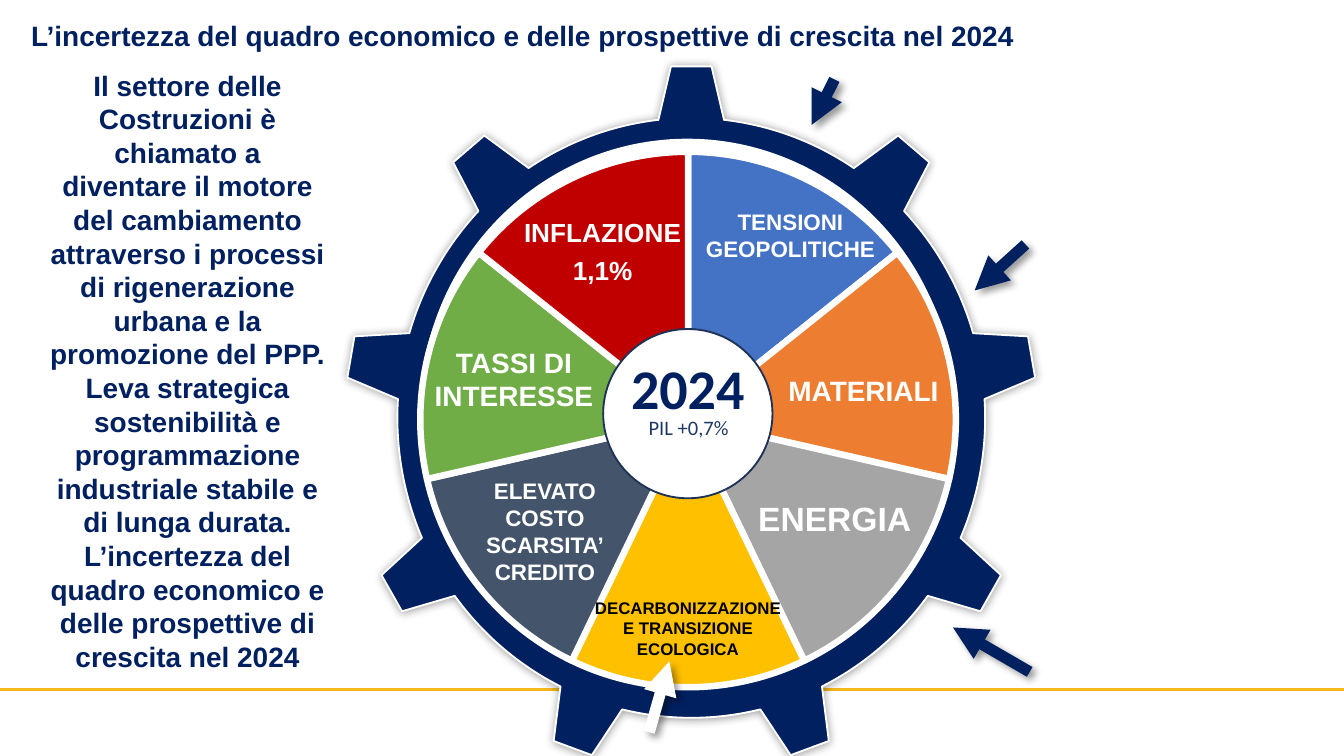
from dataclasses import dataclass

from lxml.etree import SubElement
from pptx import Presentation
from pptx.chart.data import CategoryChartData
from pptx.dml.color import RGBColor
from pptx.enum.chart import XL_CHART_TYPE
from pptx.enum.shapes import MSO_CONNECTOR, MSO_SHAPE
from pptx.enum.text import MSO_ANCHOR, MSO_AUTO_SIZE, PP_ALIGN
from pptx.oxml import parse_xml
from pptx.oxml.ns import nsdecls, qn
from pptx.util import Cm, Pt

NAVY = RGBColor(0x00, 0x20, 0x60)
DARK_BLUE = RGBColor(0x1E, 0x32, 0x56)
PIL_BLUE = RGBColor(0x20, 0x38, 0x64)
WHITE = RGBColor(0xFF, 0xFF, 0xFF)
BLACK = RGBColor(0x00, 0x00, 0x00)
GOLD = RGBColor(0xF7, 0xB8, 0x1D)
SLICE_COLORS = [RGBColor.from_string(h) for h in (
    "4472C4", "ED7D31", "A5A5A5", "FFC000", "44546A", "70AD47", "C00000")]

SPACED = {"line_spacing": 0.9, "space_after": Pt(5)}


@dataclass
class Label:
    box: tuple[float, float, float, float]
    lines: list[str]
    size: float
    color: RGBColor = WHITE
    font: str = "Arial"
    bold: bool = True
    align: PP_ALIGN = PP_ALIGN.CENTER
    spacing: dict | None = None


@dataclass
class Arrow:
    start: tuple[float, float]
    end: tuple[float, float]
    color: RGBColor = NAVY


TITLE = Label((0.41, 0.25, 24.6, 0.84),
              ["L’incertezza del quadro economico e delle prospettive di crescita nel 2024"],
              15, NAVY, align=PP_ALIGN.LEFT)
LABELS = [
    Label((9.47, 4.06, 3.84, 1.47), ["INFLAZIONE", "1,1%"], 14, spacing=SPACED),
    Label((7.9, 6.43, 3.63, 1.47), ["TASSI DI INTERESSE"], 15),
    Label((11.02, 11.2, 3.96, 1.35), ["DECARBONIZZAZIONE E TRANSIZIONE ECOLOGICA"], 9, BLACK),
    Label((8.66, 8.92, 3.28, 2.24), ["ELEVATO COSTO SCARSITA’", "CREDITO"], 12),
    Label((14.15, 9.32, 3.28, 0.97), ["ENERGIA"], 18, align=PP_ALIGN.LEFT),
    Label((14.68, 7.04, 3.28, 0.76), ["MATERIALI"], 15, spacing=SPACED),
    Label((12.83, 3.84, 4.22, 1.22), ["TENSIONI", "GEOPOLITICHE"], 12),
    Label((11.73, 7.75, 2.57, 0.66), ["PIL +0,7%"], 11, PIL_BLUE, "Calibri", False),
    Label((0.74, 1.19, 5.61, 11.79), [
        "Il settore delle Costruzioni è chiamato a diventare il motore del cambiamento "
        "attraverso i processi di rigenerazione urbana e la promozione del PPP.",
        "Leva strategica sostenibilità e programmazione industriale stabile e di lunga durata.",
        TITLE.lines[0]], 15, NAVY),
]
HUB = Label((11.4, 6.22, 3.2, 3.2), ["2024"], 30, NAVY, "Calibri")
ARROWS = [
    Arrow((19.38, 4.62), (18.42, 5.49)),
    Arrow((12.27, 13.84), (12.65, 12.5), WHITE),
    Arrow((15.77, 1.5), (15.34, 2.36)),
    Arrow((19.46, 12.7), (18.01, 11.86)),
]


def set_attrs(target, values: dict) -> None:
    for name, value in values.items():
        setattr(target, name, value)


def cm_box(box: tuple) -> list[Cm]:
    return [Cm(v) for v in box]


def add_shadow(sp, blur: float = 0, dist: float = 0, angle: int = 0, alpha: int = 0) -> None:
    """Give the shape a black outer shadow, or none when alpha is 0."""
    effects = SubElement(sp._element.spPr, qn("a:effectLst"))
    if alpha:
        effects.append(parse_xml(
            f'<a:outerShdw {nsdecls("a")} blurRad="{Pt(blur)}" dist="{Pt(dist)}" '
            f'dir="{angle * 60000}" algn="ctr" rotWithShape="0"><a:srgbClr val="000000">'
            f'<a:alpha val="{alpha * 1000}"/></a:srgbClr></a:outerShdw>'))


def write_text(tf, label: Label, insets: tuple) -> None:
    set_attrs(tf, dict(zip(("margin_left", "margin_top", "margin_right", "margin_bottom"),
                           cm_box(insets))))
    tf.word_wrap = True
    for i, line in enumerate(label.lines):
        p = tf.add_paragraph() if i else tf.paragraphs[0]
        set_attrs(p, {"alignment": label.align, **(label.spacing or {})})
        r = p.add_run()
        r.text = line
        set_attrs(r.font, {"name": label.font, "size": Pt(label.size), "bold": label.bold})
        r.font.color.rgb = label.color


def add_label(s, label: Label) -> None:
    sp = s.shapes.add_textbox(*cm_box(label.box))
    write_text(sp.text_frame, label, (0.18, 0.1, 0.18, 0.1))
    sp.text_frame.auto_size = MSO_AUTO_SIZE.SHAPE_TO_FIT_TEXT


def add_filled(s, kind: MSO_SHAPE, box: tuple, fill: RGBColor, line: RGBColor):
    sp = s.shapes.add_shape(kind, *cm_box(box))
    sp.shadow.inherit = False
    sp.fill.solid()
    sp.fill.fore_color.rgb = fill
    sp.line.color.rgb = line
    sp.line.width = Pt(1)
    return sp


def add_line(s, start: tuple, end: tuple, color: RGBColor, width: float):
    sp = s.shapes.add_connector(MSO_CONNECTOR.STRAIGHT, *cm_box(start + end))
    sp.line.color.rgb = color
    sp.line.width = Pt(width)
    return sp


def add_arrow(s, arrow: Arrow) -> None:
    sp = add_line(s, arrow.start, arrow.end, arrow.color, 6)
    SubElement(sp.line._get_or_add_ln(), qn("a:tailEnd"), type="triangle")
    add_shadow(sp, blur=4, dist=3, angle=45, alpha=40)


def add_gear(s) -> None:
    gear = add_filled(s, MSO_SHAPE.GEAR_9, (6.5, 1.22, 13.13, 13.36), NAVY, WHITE)
    gear.adjustments[0] = 0.077
    gear.adjustments[1] = 0.018
    gear._element.spPr.remove(gear._element.spPr.find(qn("a:effectLst")))
    add_shadow(gear, blur=5, alpha=40)
    add_filled(s, MSO_SHAPE.OVAL, (7.95, 2.64, 10.08, 10.31), WHITE, WHITE)


def add_pie(s) -> None:
    data = CategoryChartData()
    data.categories = [str(n + 1) for n in range(len(SLICE_COLORS))]
    data.add_series("Series 1", [14] * len(SLICE_COLORS))
    chart = s.shapes.add_chart(XL_CHART_TYPE.PIE, *cm_box((4.47, 2.49, 17.07, 10.85)),
                               data).chart
    set_attrs(chart, {"has_title": False, "has_legend": False})
    set_attrs(chart.font, {"name": "Calibri", "size": Pt(10)})
    chart.font.color.rgb = BLACK
    plot = chart.plots[0]
    plot.vary_by_categories = True
    for i, color in enumerate(SLICE_COLORS):
        fmt = plot.series[0].points[i].format
        fmt.fill.solid()
        fmt.fill.fore_color.rgb = color
        fmt.line.color.rgb = WHITE
        fmt.line.width = Pt(3.5)

    area = chart._chartSpace.chart.plotArea
    for layout in area.findall(qn("c:layout")):
        area.remove(layout)
    layout = parse_xml(f'<c:layout {nsdecls("c")}><c:manualLayout/></c:layout>')
    for tag, value in (("layoutTarget", "inner"), ("xMode", "edge"), ("yMode", "edge"),
                       ("x", "0.203"), ("y", "0.035"), ("w", "0.594"), ("h", "0.933")):
        SubElement(layout[0], qn(f"c:{tag}"), val=value)
    area.insert(0, layout)


def main() -> None:
    prs = Presentation()
    prs.slide_width, prs.slide_height = Cm(25.4), Cm(14.29)
    s = prs.slides.add_slide(prs.slide_layouts[6])

    add_shadow(add_line(s, (25.4, 13.03), (0, 13.03), GOLD, 1.5))
    add_gear(s)
    add_label(s, TITLE)
    add_pie(s)
    hub = add_filled(s, MSO_SHAPE.OVAL, HUB.box, WHITE, DARK_BLUE)
    write_text(hub.text_frame, HUB, (0, 0, 0, 1))
    hub.text_frame.vertical_anchor = MSO_ANCHOR.MIDDLE
    for label in LABELS:
        add_label(s, label)
    for arrow in ARROWS:
        add_arrow(s, arrow)
    prs.save("out.pptx")


if __name__ == "__main__":
    main()
